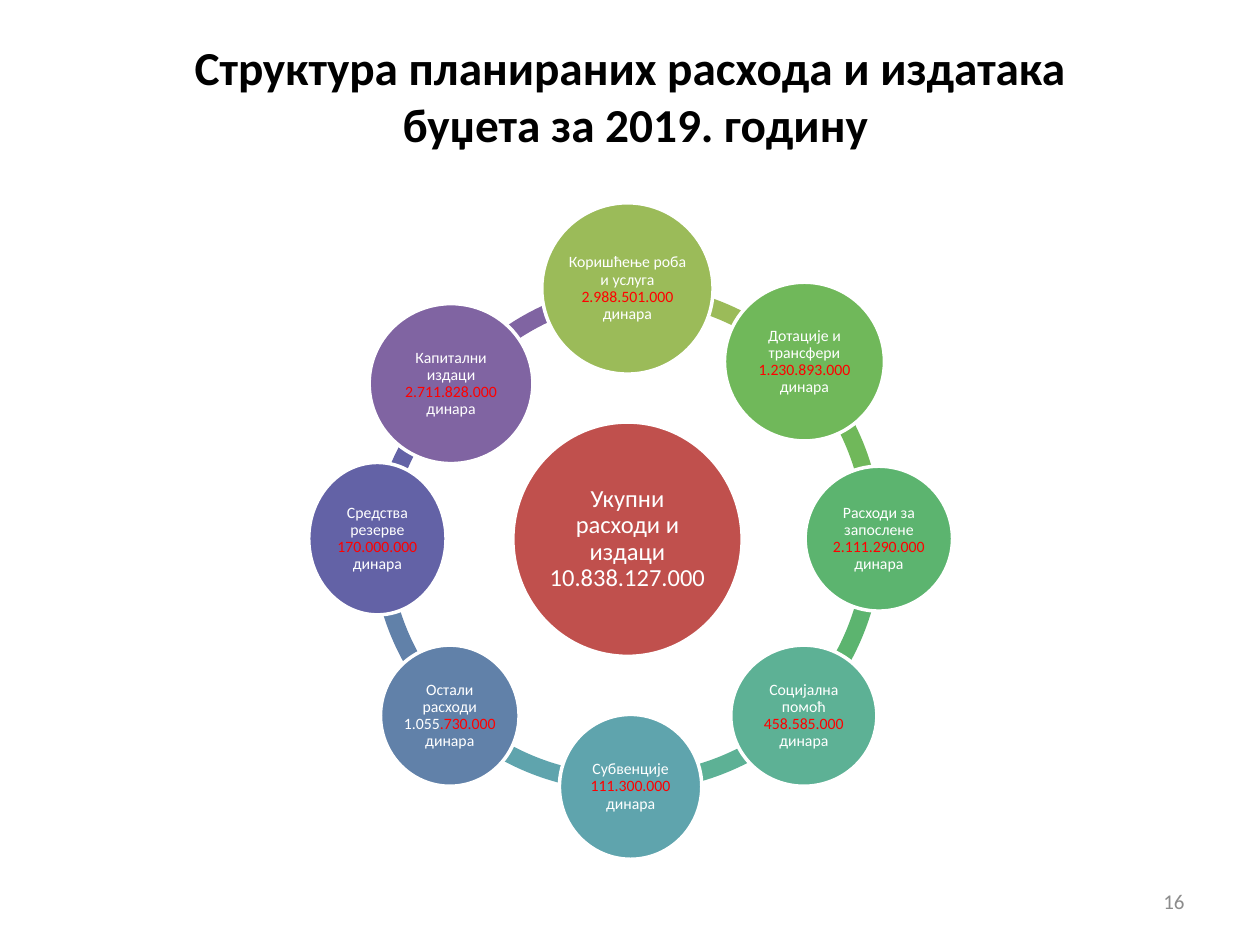
"""Builds the slide on the structure of planned 2019 budget expenditure."""
from pptx import Presentation
from pptx.dml.color import RGBColor
from pptx.enum.shapes import MSO_SHAPE as Shape
from pptx.enum.text import MSO_ANCHOR as Anchor, PP_ALIGN as Align
from pptx.util import Inches, Pt

COLORS = {
    "black": "000000", "white": "FFFFFF", "amount": "FF0000", "number": "8C8C8C",
    "total": "C0504D", "goods": "9BBB59", "transfers": "70B85A", "staff": "5CB46F",
    "social": "5DB195", "subsidies": "5FA4AD", "other": "6181A9",
    "reserve": "6362A6", "capital": "8064A2",
}
ARC_SIZE = 4.05
ARC_THICKNESS = 0.034

ARCS = [
    ("capital", 3.13, 2.24, 130.7, 158.93),
    ("reserve", 2.94, 2.45, 111.49, 135.56),
    ("other", 2.95, 2.25, 81, 108),
    ("subsidies", 2.93, 2.23, 53.1, 80.46),
    ("social", 2.98, 2.23, 27.56, 53.88),
    ("staff", 2.95, 2.25, 0, 27),
    ("transfers", 2.95, 2.25, 189, 0),
    ("goods", 2.95, 2.25, 162, 189),
]
CIRCLES = [
    ("total", (4.07, 3.35, 1.82, 1.86), "Укупни расходи и издаци 10.838.127.000", "", ""),
    ("goods", (4.3, 1.61, 1.36, 1.36), "Коришћење роба и услуга ", "2.988.501.000", " динара"),
    ("transfers", (5.75, 2.24, 1.27, 1.26), "Дотације и трансфери ", "1.230.893.000", " динара"),
    ("staff", (6.39, 3.7, 1.17, 1.15), "Расходи за запослене ", "2.111.290.000", " динара"),
    ("social", (5.8, 5.12, 1.16, 1.12), "Социјална помоћ ", "458.585.000", " динара"),
    ("subsidies", (4.44, 5.67, 1.13, 1.15), "Субвенције ", "111.300.000", " динара"),
    ("other", (3.02, 5.12, 1.1, 1.12), "Остали расходи 1.055", ".730.000", " динара"),
    ("reserve", (2.45, 3.67, 1.09, 1.21), "Средства резерве ", "170.000.000", " динара"),
    ("capital", (2.93, 2.41, 1.3, 1.27), "Капитални издаци ", "2.711.828.000", " динара"),
]


def rgb(name):
    return RGBColor.from_string(COLORS[name])


def format_paragraph(paragraph, size, color, align):
    paragraph.alignment = align
    paragraph.font.name = "Calibri"
    paragraph.font.size = Pt(size)
    if color:
        paragraph.font.color.rgb = rgb(color)


deck = Presentation()
deck.slide_width, deck.slide_height = Inches(10), Inches(7.5)
slide = deck.slides.add_slide(deck.slide_layouts[5])

title = slide.shapes.title
title.left, title.top, title.width, title.height = map(Inches, (0.5, 0.29, 9, 0.93))
title.text_frame.text = "Структура планираних расхода и издатака\v буџета за 2019. годину"
title.text_frame.vertical_anchor = Anchor.MIDDLE
heading = title.text_frame.paragraphs[0]
format_paragraph(heading, 27, "black", Align.CENTER)
heading.font.bold = True

for category, left, top, start, end in ARCS:
    arc = slide.shapes.add_shape(
        Shape.BLOCK_ARC, *map(Inches, (left, top, ARC_SIZE, ARC_SIZE)))
    for index, value in enumerate((start, end, ARC_THICKNESS)):
        arc.adjustments[index] = value
    arc.shadow.inherit = False
    arc.fill.solid()
    arc.fill.fore_color.rgb = rgb(category)
    arc.line.fill.background()

for category, box, label, amount, unit in CIRCLES:
    circle = slide.shapes.add_shape(Shape.OVAL, *map(Inches, box))
    circle.shadow.inherit = False
    circle.fill.solid()
    circle.fill.fore_color.rgb = rgb(category)
    circle.line.color.rgb = rgb("white")
    circle.line.width = Pt(2)
    frame = circle.text_frame
    frame.word_wrap = True
    frame.vertical_anchor = Anchor.MIDDLE
    inset = Inches(0.02 if category == "total" else 0.01)
    frame.margin_left = frame.margin_right = inset
    frame.margin_top = frame.margin_bottom = inset
    caption = frame.paragraphs[0]
    format_paragraph(caption, 14 if category == "total" else 9, None, Align.CENTER)
    caption.line_spacing = 0.9
    for text, color in ((label, "white"), (amount, "amount"), (unit, "white")):
        if text:
            run = caption.add_run()
            run.text = text
            run.font.color.rgb = rgb(color)

page = slide.shapes.add_textbox(*map(Inches, (7.17, 6.95, 2.33, 0.4))).text_frame
page.word_wrap = True
page.vertical_anchor = Anchor.MIDDLE
page.text = "16"
format_paragraph(page.paragraphs[0], 12, "number", Align.RIGHT)

deck.save("out.pptx")
